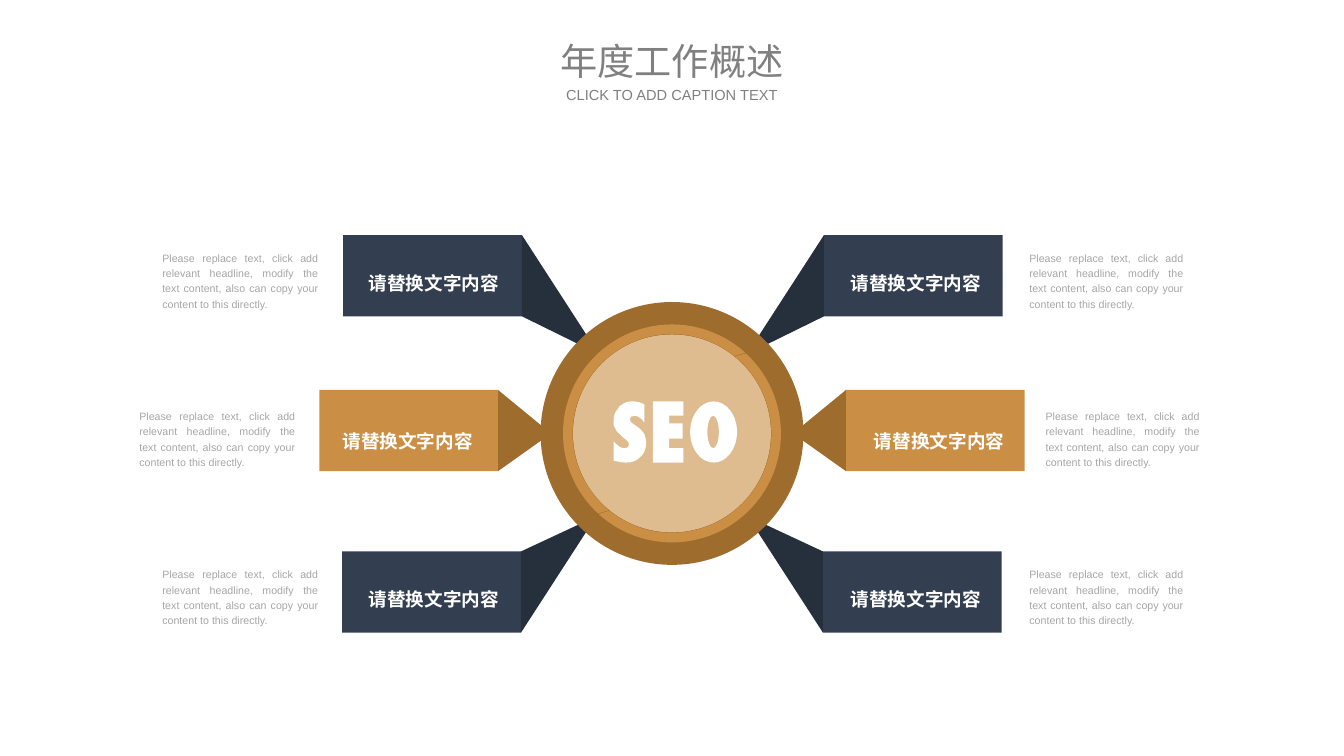
from math import ceil, cos, floor, radians, sin, tan

from pptx import Presentation, util as u
from pptx.dml.color import RGBColor
from pptx.enum import shapes, text
from pptx.oxml import ns, xmlchemy

# Grid of square cells, 0.1 inch wide; all lengths below are in cells
CELL = u.Inches(0.1)
COLS, ROWS = 140.6, 79.1
MID = COLS / 2
HUB_X, HUB_Y = MID, 45.35

NAVY, NAVY_DARK = "333F50", "262F3C"
GOLD, GOLD_DARK, GOLD_PALE = "CA8F45", "9E6C2D", "DFBC8F"
WHITE, GREY, GREY_PALE = "FFFFFF", "808080", "A6A6A6"

LABEL = "请替换文字内容"
NOTE = ("Please replace text, click add relevant headline, modify the text "
        "content, also can copy your content to this directly.")

BOX_W, BOX_H = 18.7, 8.5
TEXT_PITCH = 16.55
# Box top, axis of the box pair, inner edge, wedge tip (distance, row),
# label axis and distance, note axis and distance, box and wedge colours
ARMS = [
    (24.6, 70.4, 15.8, [(9, 35.1), (9.9, 36)], 70.6, 25.2, 70.45, 45.3,
     NAVY, NAVY_DARK),
    (40.8, 70.3, 18.2, [(13.7, 44.5), (13.7, 46.1)], 70.45, 27.8, 70.1, 47.35,
     GOLD, GOLD_DARK),
    (57.7, 70.3, 15.8, [(9.8, 54.9), (9, 55.7)], 70.6, 25.2, 70.45, 45.3,
     NAVY, NAVY_DARK),
]

# Outlines: one point is a line, three points are a curve
LETTER_S = [
    [(64.2, 48.2)], [(64.2, 46.2)],
    [(64.6, 46.6), (64.9, 46.9), (65.3, 46.9)],
    [(65.5, 46.9), (65.6, 46.8), (65.7, 46.8)],
    [(65.8, 46.7), (65.8, 46.6), (65.8, 46.5)],
    [(65.8, 46.3), (65.7, 46.2), (65.5, 46)], [(65.2, 45.8)],
    [(65.1, 45.7), (64.9, 45.5), (64.8, 45.4)],
    [(64.6, 45.3), (64.5, 45.1), (64.4, 44.9)],
    [(64.3, 44.8), (64.3, 44.6), (64.2, 44.5)],
    [(64.2, 44.3), (64.2, 44.2), (64.2, 44)],
    [(64.2, 43.7), (64.2, 43.4), (64.4, 43.1)],
    [(64.5, 43), (64.6, 42.8), (64.7, 42.7)],
    [(64.7, 42.6), (64.8, 42.4), (65, 42.4)],
    [(65.3, 42.1), (65.7, 42), (66.2, 42)],
    [(66.6, 42), (67, 42.1), (67.4, 42.3)], [(67.4, 44.2)],
    [(67.3, 44), (67.1, 43.8), (66.9, 43.7)],
    [(66.8, 43.6), (66.6, 43.5), (66.4, 43.5)],
    [(66.3, 43.5), (66.2, 43.6), (66, 43.6)],
    [(66, 43.7), (65.9, 43.8), (65.9, 43.9)],
    [(65.9, 44.1), (66, 44.2), (66.3, 44.4)], [(66.6, 44.6)],
    [(66.9, 44.8), (67.2, 45.1), (67.4, 45.4)],
    [(67.5, 45.7), (67.6, 46), (67.6, 46.3)],
    [(67.6, 46.9), (67.4, 47.5), (67, 47.8)],
    [(66.6, 48.2), (66.2, 48.4), (65.5, 48.4)],
    [(65.1, 48.4), (64.7, 48.3), (64.2, 48.2)]]
LETTER_E = [[p] for p in [
    (68.3, 48.4), (68.3, 42), (71.5, 42), (71.5, 43.5), (70, 43.5),
    (70, 44.3), (71.4, 44.3), (71.4, 45.9), (70, 45.9), (70, 46.9),
    (71.5, 46.9), (71.5, 48.4)]]


def cells(*values):
    return [round(v * CELL) for v in values]


def color(hex_code):
    return RGBColor.from_string(hex_code)


def paint(sp, fill):
    sp.shadow.inherit = False
    sp.fill.solid()
    sp.fill.fore_color.rgb = color(fill)
    sp.line.fill.background()


def add_preset(s, kind, x, y, w, h, fill):
    paint(s.shapes.add_shape(kind, *cells(x, y, w, h)), fill)


def add_disc(s, radius, fill):
    add_preset(s, shapes.MSO_SHAPE.OVAL, HUB_X - radius, HUB_Y - radius,
               2 * radius, 2 * radius, fill)


def add_outline(s, fill, *contours):
    builder = s.shapes.build_freeform(*cells(*contours[0][0][0]), scale=1.0)
    for i, contour in enumerate(contours):
        if i:
            builder.move_to(*cells(*contour[0][0]))
        points = [p for step in contour[1:] for p in step]
        builder.add_line_segments([cells(*p) for p in points], close=True)
    sp = builder.convert_to_shape()
    # Join each run of three points into a Bezier curve
    lines = iter(list(sp._element.iter(ns.qn("a:lnTo"))))
    for step in [step for contour in contours for step in contour[1:]]:
        parts = [next(lines) for _ in step]
        if len(parts) == 3:
            curve = xmlchemy.OxmlElement("a:cubicBezTo")
            parts[0].addprevious(curve)
            for line in parts:
                curve.append(line[0])
                line.getparent().remove(line)
    paint(sp, fill)


def arc(x, y, rx, ry, start, end):
    """Curves along an ellipse, split where it crosses the axes."""
    low, high = sorted((start, end))
    turns = [90 * i for i in range(floor(low / 90) + 1, ceil(high / 90))]
    angles = [radians(a) for a in sorted([low, *turns, high],
                                         reverse=start > end)]

    def point(a, pull=0):
        return (x + rx * (cos(a) - pull * sin(a)),
                y + ry * (sin(a) + pull * cos(a)))

    steps = [[point(angles[0])]]
    for a, b in zip(angles, angles[1:]):
        pull = 4 / 3 * tan((b - a) / 4)
        steps.append([point(a, pull), point(b, -pull), point(b)])
    return steps


def add_text(s, x, y, w, h, content, size, hex_code, align, bold=None,
             wrap=True, flush=False):
    tf = s.shapes.add_textbox(*cells(x, y, w, h)).text_frame
    tf.word_wrap = wrap
    tf.auto_size = text.MSO_AUTO_SIZE.SHAPE_TO_FIT_TEXT
    p = tf.paragraphs[0]
    p.alignment = align
    if flush:
        tf.margin_left = tf.margin_right = tf.margin_top = tf.margin_bottom = 0
        tf.vertical_anchor = text.MSO_ANCHOR.MIDDLE
    else:
        p.line_spacing = 1.2
    r = p.add_run()
    r.text = content
    r.font.name = "Arial"
    r.font.size = u.Pt(size)
    r.font.bold = bold
    r.font.color.rgb = color(hex_code)


def add_arm(s, row, side):
    (top, axis, inner, tip, label_axis, label_d, note_axis, note_d,
     fill, shade) = ARMS[row]
    edge = axis + side * inner
    add_preset(s, shapes.MSO_SHAPE.RECTANGLE, min(edge, edge + side * BOX_W),
               top, BOX_W, BOX_H, fill)
    wedge = [(edge, top), *[(axis + side * d, y) for d, y in tip],
             (edge, top + BOX_H)]
    add_outline(s, shade, [[p] for p in wedge])
    add_text(s, label_axis + side * label_d - 7.9, 27.5 + row * TEXT_PITCH,
             15.8, 3.6, LABEL, 14, WHITE, text.PP_ALIGN.CENTER,
             bold=True, wrap=False)
    note_w = 18.1 if side > 0 else 18.3
    add_text(s, note_axis + side * note_d - note_w / 2,
             25.6 + row * TEXT_PITCH, note_w, 7.3,
             NOTE, 8, GREY_PALE, text.PP_ALIGN.JUSTIFY)


def add_hub(s):
    add_disc(s, 13.75, GOLD_DARK)
    add_disc(s, 10.35, GOLD_PALE)
    # Two half rings, parted by slanted seams
    for turn in (0, 180):
        add_outline(s, GOLD,
                    arc(HUB_X, HUB_Y, 11.4, 11.4, turn - 47.3, turn + 132.3)
                    + [[p[-1]] if i == 0 else p for i, p in enumerate(
                        arc(HUB_X, HUB_Y, 10.4, 10.4, turn + 129, turn - 50.6))])
    # Lettering
    add_outline(s, WHITE, LETTER_S)
    add_outline(s, WHITE, LETTER_E)
    add_outline(s, WHITE, arc(74.65, 45.2, 2.45, 3.2, 0, 360),
                arc(74.6, 45.2, 0.6, 1.7, 0, 360))


def main():
    prs = Presentation()
    prs.slide_width, prs.slide_height = cells(COLS, ROWS)
    s = prs.slides.add_slide(prs.slide_layouts[6])

    # Arms on both sides, then the hub over their tips
    for row in range(len(ARMS)):
        for side in (1, -1):
            add_arm(s, row, side)
    add_hub(s)

    # Heading
    for y, h, content, size in [(3.9, 4.9, "年度工作概述", 28),
                                (9, 1.9, "CLICK TO ADD CAPTION TEXT", 11)]:
        add_text(s, MID - 12.65, y, 25.3, h, content, size, GREY,
                 text.PP_ALIGN.CENTER, flush=True)

    prs.save("out.pptx")


if __name__ == "__main__":
    main()
